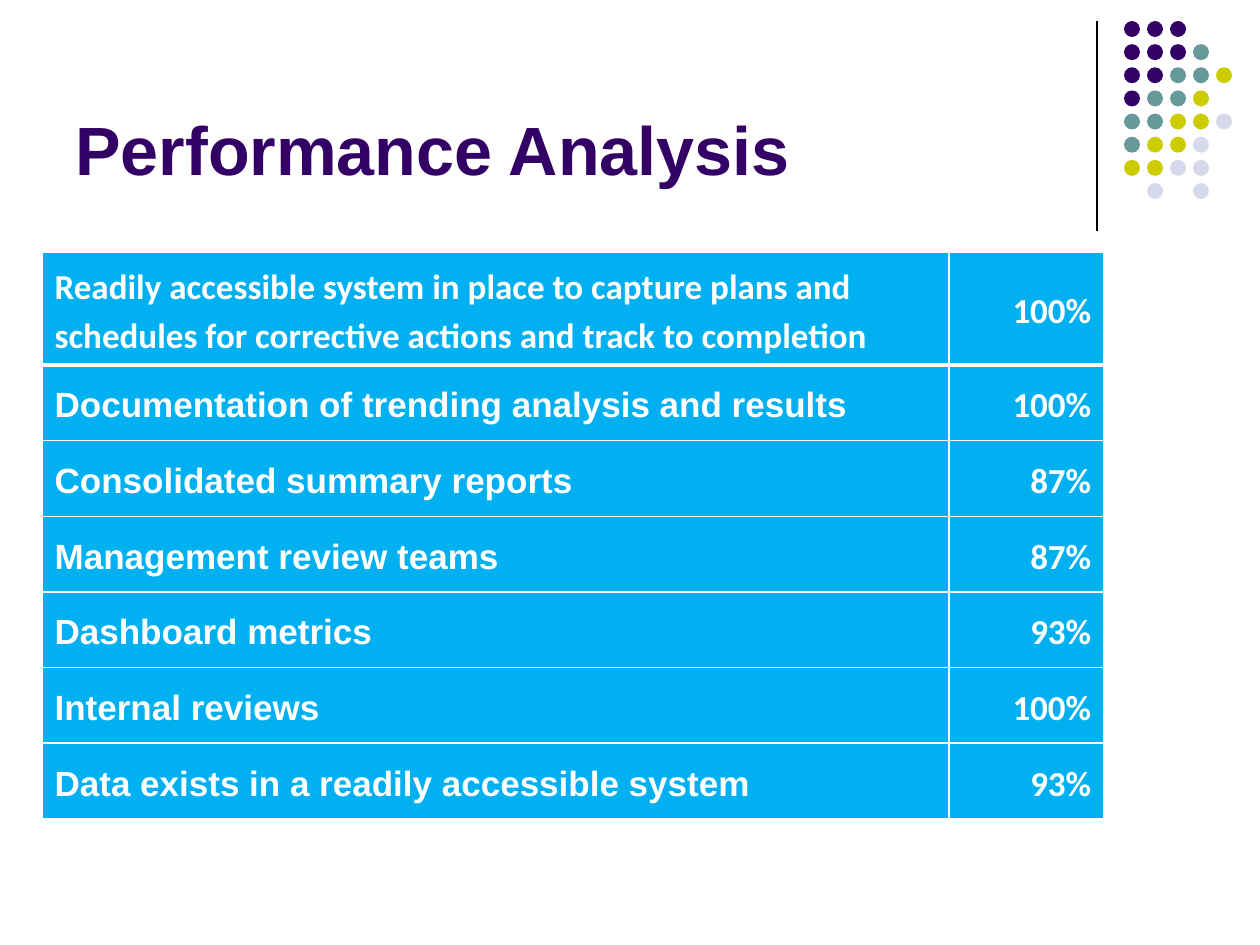
from lxml.etree import SubElement
from pptx import Presentation
from pptx.dml.color import RGBColor
from pptx.enum.shapes import MSO_CONNECTOR as Conn, MSO_SHAPE as Shape
from pptx.enum.text import MSO_ANCHOR as Anchor, PP_ALIGN as Align
from pptx.oxml import parse_xml
from pptx.oxml.ns import nsdecls, qn
from pptx.util import Emu, Pt

SCALE = 914400 / 126
DARK, TEAL, LIME, PALE = "330066", "669999", "CCCC00", "D8D8EC"
WHITE, BLUE, BLACK = "FFFFFF", "00B0F0", "000000"
TONES = {"d": DARK, "t": TEAL, "l": LIME, "p": PALE}
DOTS = ["ddd", "dddt", "ddttl", "dttl", "ttllp", "tllp", "llpp", " p p"]
ROWS = [
    ("Readily accessible system in place to capture plans and schedules "
     "for corrective actions and track to completion", "100%"),
    ("Documentation of trending analysis and results", "100%"),
    ("Consolidated summary reports", "87%"),
    ("Management review teams", "87%"),
    ("Dashboard metrics", "93%"),
    ("Internal reviews", "100%"),
    ("Data exists in a readily accessible system", "93%"),
]


def px(*nums):
    """Turn px into EMU: one length, or a list of them."""
    out = [Emu(round(n * SCALE)) for n in nums]
    return out if len(out) > 1 else out[0]


def tint(color, code):
    color.rgb = RGBColor.from_string(code)


def write(frame, text, code, align=Align.LEFT, space=1, **form):
    para = frame.paragraphs[0]
    para.alignment, para.line_spacing = align, space
    run = para.add_run()
    run.text = text
    for key, val in form.items():
        setattr(run.font, key, val)
    tint(run.font.color, code)


def add_title(slide, box, text):
    frame = slide.shapes.add_textbox(*px(*box)).text_frame
    frame.word_wrap = True
    frame.vertical_anchor = Anchor.BOTTOM
    write(frame, text, DARK, name="Arial", size=Pt(39), bold=True)


def add_rule(slide, x, top, end):
    line = slide.shapes.add_connector(Conn.STRAIGHT, *px(x, top, x, end))
    tint(line.line.color, BLACK)
    line.line.width = Pt(0.75)
    SubElement(line._element.spPr, qn("a:effectLst"))


def add_dots(slide, box, size=16):
    """Spread the rows of DOTS evenly over the box."""
    x, y, w, h = box
    across = (w - size) / (max(map(len, DOTS)) - 1)
    down = (h - size) / (len(DOTS) - 1)
    group = slide.shapes.add_group_shape()
    for r, row in enumerate(DOTS):
        for c, tone in enumerate(row):
            if tone not in TONES:
                continue
            spot = px(x + c * across, y + r * down, size, size)
            dot = group.shapes.add_shape(Shape.OVAL, *spot)
            dot.shadow.inherit = False
            dot.fill.solid()
            tint(dot.fill.fore_color, TONES[tone])
            dot.line.fill.background()


def edge(cell, **sides):
    """Draw white borders, with widths in points, in the order L, R, T, B."""
    props = cell._tc.get_or_add_tcPr()
    for i, (side, width) in enumerate(sides.items()):
        props.insert(i, parse_xml(
            f'<a:ln{side} {nsdecls("a")} w="{Pt(width)}"><a:solidFill>'
            f'<a:srgbClr val="{WHITE}"/></a:solidFill></a:ln{side}>'))


def add_grid(slide, box, side=155, head=113):
    """Place the table: a narrow right column and a taller first row."""
    w, h = box[2:]
    table = slide.shapes.add_table(len(ROWS), 2, *px(*box)).table
    for col, wide in zip(table.columns, px(w - side, side)):
        col.width = wide
    for r, row in enumerate(ROWS):
        table.rows[r].height = px((h - head) / (len(ROWS) - 1) if r else head)
        for c, text in enumerate(row):
            cell = table.cell(r, c)
            cell.vertical_anchor = Anchor.MIDDLE
            cell.fill.solid()
            tint(cell.fill.fore_color, BLUE)
            edge(cell, L=1, R=1, T=3 if r == 1 else 1, B=1 if r else 3)
            write(cell.text_frame, text, WHITE,
                  align=Align.RIGHT if c else Align.LEFT, space=1.15,
                  name="Arial" if r and not c else "Calibri",
                  size=Pt(20), bold=True)


def main():
    prs = Presentation()
    prs.slide_width, prs.slide_height = px(1260, 945)
    slide = prs.slides.add_slide(prs.slide_layouts[6])
    add_rule(slide, 1097, 21, 231)
    add_dots(slide, (1124, 21, 108, 178))
    add_title(slide, (63, 16, 1040, 179), "Performance Analysis")
    add_grid(slide, (42, 252, 1062, 567))
    prs.save("out.pptx")


if __name__ == "__main__":
    main()
